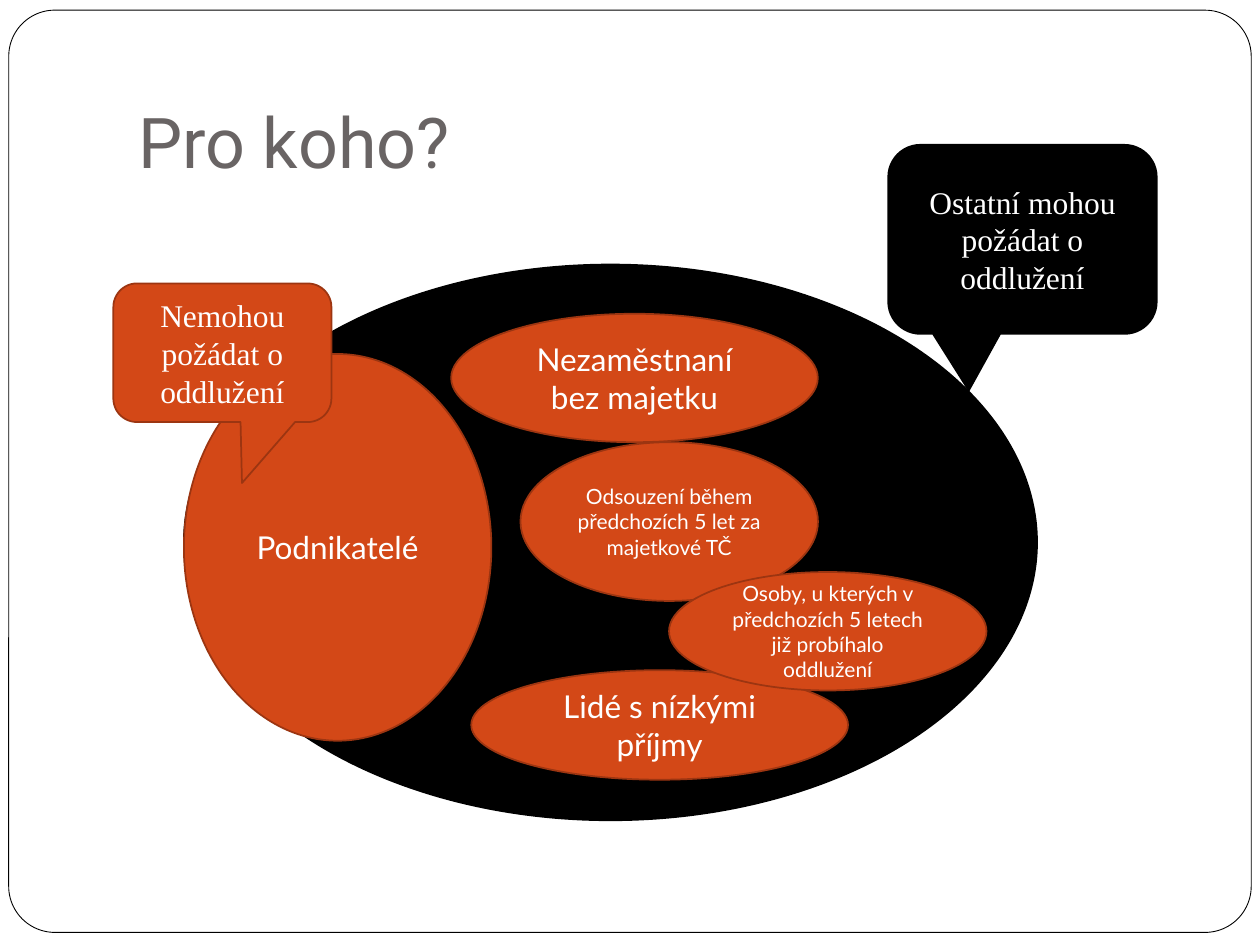
from dataclasses import dataclass

from pptx import Presentation
from pptx.dml.color import RGBColor
from pptx.enum.shapes import MSO_SHAPE
from pptx.enum.text import MSO_ANCHOR, MSO_AUTO_SIZE, PP_ALIGN
from pptx.shapes.autoshape import Shape
from pptx.slide import Slide
from pptx.util import Pt

COLORS = {
    "white": "FFFFFF",
    "black": "000000",
    "orange": "D34817",
    "rust": "9C3511",
    "title": "696464",
}
OUTLINES = {"white": "black", "black": "black", "orange": "rust"}


@dataclass(frozen=True)
class Bubble:
    box: tuple[float, float, float, float]
    text: str = ""
    size: float = 18
    font: str = "Lato"
    fill: str = "orange"
    preset: MSO_SHAPE = MSO_SHAPE.OVAL
    adjustments: tuple[float, ...] = ()
    outline: float = 1


FRAME = Bubble((5, 5.8, 710, 527), fill="white", preset=MSO_SHAPE.ROUNDED_RECTANGLE,
               adjustments=(0.05,), outline=0.5)

BUBBLES = [
    Bubble((105.1, 151.2, 487.5, 317.5), fill="black"),
    Bubble((105.1, 202.3, 175.7, 221), "Podnikatelé"),
    Bubble((257.8, 179.3, 209.5, 73.4), "Nezaměstnaní bez majetku"),
    Bubble((269.3, 383, 215.3, 62.6), "Lidé s nízkými příjmy"),
    Bubble((297.4, 252.7, 170, 90.7),
           "Odsouzení během předchozích 5 let za majetkové TČ", 12),
    Bubble((382.3, 326.9, 181.4, 67.7),
           "Osoby, u kterých v předchozích 5 letech již probíhalo oddlužení", 12),
    Bubble((507.6, 82.8, 153.4, 108), "Ostatní mohou požádat o oddlužení",
           font="Times New Roman", fill="black",
           preset=MSO_SHAPE.ROUNDED_RECTANGULAR_CALLOUT, adjustments=(-0.2, 0.8, 0.17)),
    Bubble((64.8, 162, 124.6, 79.2), "Nemohou požádat o oddlužení",
           font="Times New Roman",
           preset=MSO_SHAPE.ROUNDED_RECTANGULAR_CALLOUT, adjustments=(0.09, 0.94, 0.17)),
]


def color(key: str) -> RGBColor:
    return RGBColor.from_string(COLORS[key])


def write(shape: Shape, text: str, size: float, font: str, ink: str,
          align: PP_ALIGN, frame_format: dict) -> None:
    frame = shape.text_frame
    for attribute, value in frame_format.items():
        setattr(frame, attribute, value)
    paragraph = frame.paragraphs[0]
    paragraph.alignment = align
    run = paragraph.add_run()
    run.text = text
    for attribute, value in {"name": font, "size": Pt(size), "bold": False}.items():
        setattr(run.font, attribute, value)
    run.font.color.rgb = color(ink)


def draw_bubble(slide: Slide, bubble: Bubble) -> Shape:
    shape = slide.shapes.add_shape(bubble.preset, *map(Pt, bubble.box))
    shape.shadow.inherit = False
    for index, value in enumerate(bubble.adjustments):
        shape.adjustments[index] = value
    shape.fill.solid()
    shape.fill.fore_color.rgb = color(bubble.fill)
    shape.line.color.rgb = color(OUTLINES[bubble.fill])
    shape.line.width = Pt(bubble.outline)
    if bubble.text:
        write(shape, bubble.text, bubble.size, bubble.font, "white", PP_ALIGN.CENTER,
              {"word_wrap": True, "vertical_anchor": MSO_ANCHOR.MIDDLE})
    return shape


def draw_title(slide: Slide, text: str) -> None:
    heading = slide.shapes.title
    placement = {"left": 72, "top": 21.6, "width": 612, "height": 90}
    for attribute, value in placement.items():
        setattr(heading, attribute, Pt(value))
    write(heading, text, 40, "Roboto", "title", PP_ALIGN.LEFT, {
        "word_wrap": True,
        "auto_size": MSO_AUTO_SIZE.NONE,
        "vertical_anchor": MSO_ANCHOR.BOTTOM,
        "margin_left": Pt(7.2),
        "margin_top": Pt(3.6),
        "margin_right": Pt(7.2),
        "margin_bottom": Pt(7.2),
    })


def main() -> None:
    presentation = Presentation()
    presentation.slide_width = Pt(720)
    presentation.slide_height = Pt(540)
    slide = presentation.slides.add_slide(presentation.slide_layouts[5])
    border = draw_bubble(slide, FRAME)
    slide.shapes.title.element.addprevious(border.element)
    draw_title(slide, "Pro koho?")
    for bubble in BUBBLES:
        draw_bubble(slide, bubble)
    presentation.save("out.pptx")


if __name__ == "__main__":
    main()
